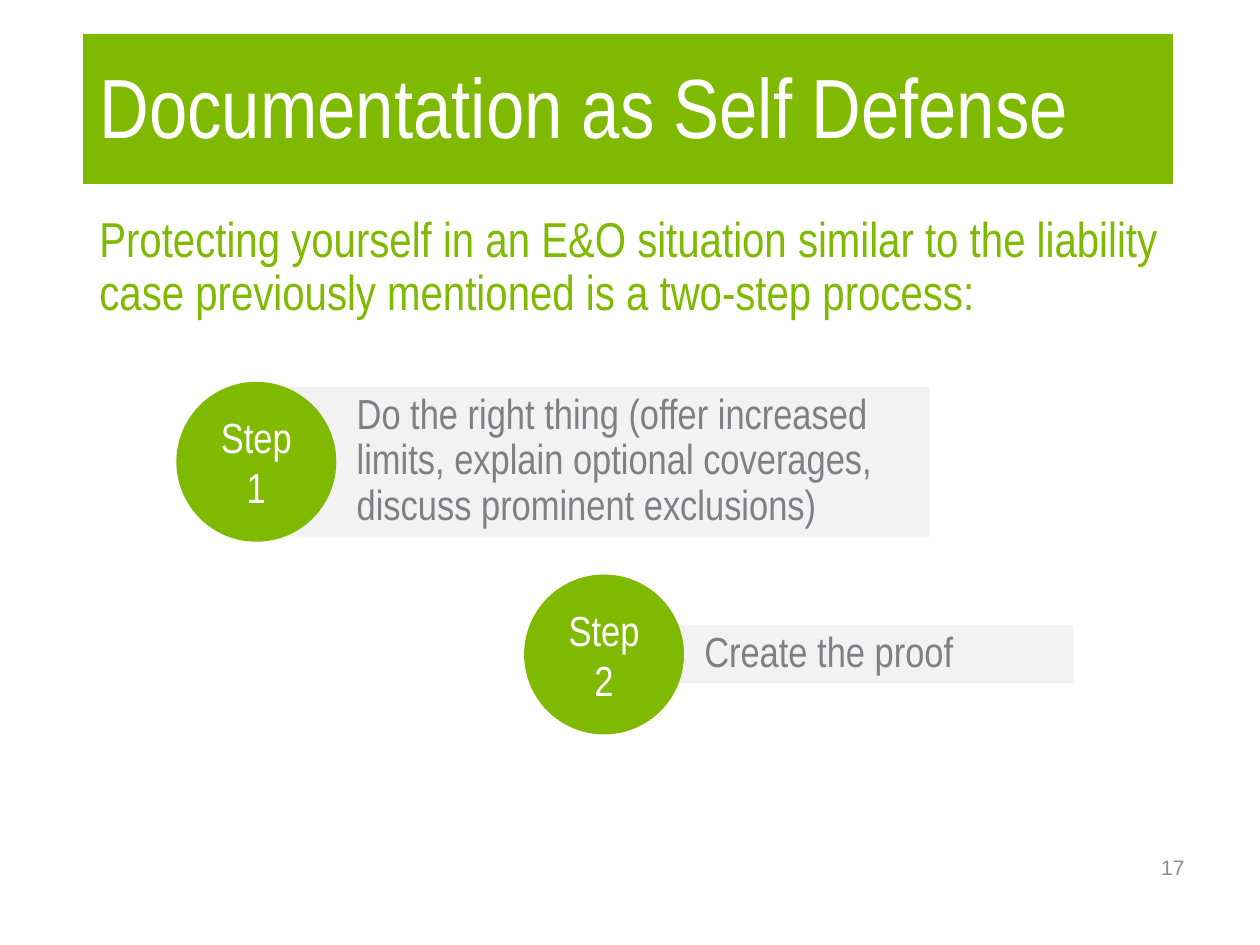
"""Build the slide on documentation as self defense."""
from dataclasses import dataclass

from pptx import Presentation
from pptx import util as u
from pptx.dml.color import RGBColor
from pptx.enum import shapes, text

GREEN = RGBColor(0x7F, 0xBA, 0x00)
WHITE = RGBColor(0xFF, 0xFF, 0xFF)
PALE = RGBColor(0xF2, 0xF2, 0xF2)
SLATE = RGBColor(0x80, 0x80, 0x84)
GRAY = RGBColor(0x8C, 0x8C, 0x8C)
NARROW = "Arial Narrow"
DIAMETER = 91.4
BAR_OFFSET = 59.8
BAR_INSET = 43.2


@dataclass
class Step:
    label: str
    message: str
    left: float
    top: float
    bar_width: float
    bar_height: float


STEPS = [
    Step("Step\v1", "Do the right thing (offer increased limits, explain "
         "optional coverages, discuss prominent exclusions)",
         100.8, 218.2, 370.8, 85.7),
    Step("Step\v2", "Create the proof", 299.5, 328.3, 254.2, 33.1),
]


def write(box, wording: str, size: float, color: RGBColor,
          font: str = NARROW, align=text.PP_ALIGN.LEFT,
          anchor=text.MSO_ANCHOR.TOP, spacing: float = 1.0) -> None:
    frame = box.text_frame
    frame.text = wording
    frame.word_wrap = True
    frame.auto_size = text.MSO_AUTO_SIZE.NONE
    frame.vertical_anchor = anchor
    para = frame.paragraphs[0]
    para.alignment = align
    para.line_spacing = spacing
    for span in para.runs:
        span.font.name = font
        span.font.size = u.Pt(size)
        span.font.color.rgb = color


def add_block(page, kind, left: float, top: float, width: float,
              height: float, fill: RGBColor):
    block = page.shapes.add_shape(
        kind, u.Pt(left), u.Pt(top), u.Pt(width), u.Pt(height))
    block.shadow.inherit = False
    block.fill.solid()
    block.fill.fore_color.rgb = fill
    block.line.fill.background()
    return block


def add_step(page, step: Step) -> None:
    bar_top = step.top + (DIAMETER - step.bar_height) / 2
    bar = add_block(page, shapes.MSO_SHAPE.RECTANGLE, step.left + BAR_OFFSET,
                    bar_top, step.bar_width, step.bar_height, PALE)
    write(bar, step.message, 24, SLATE, spacing=0.9)
    bar.text_frame.margin_left = u.Pt(BAR_INSET)
    circle = add_block(page, shapes.MSO_SHAPE.OVAL, step.left, step.top,
                       DIAMETER, DIAMETER, GREEN)
    write(circle, step.label, 24, WHITE, align=text.PP_ALIGN.CENTER,
          anchor=text.MSO_ANCHOR.MIDDLE)


def main() -> None:
    deck = Presentation()
    deck.slide_width, deck.slide_height = u.Pt(720), u.Pt(540)
    page = deck.slides.add_slide(deck.slide_layouts[5])

    title = page.shapes.title
    title.left, title.top = u.Pt(49.7), u.Pt(14.4)
    title.width, title.height = u.Pt(620.6), u.Pt(97.9)
    write(title, "Documentation as Self Defense", 48, WHITE,
          anchor=text.MSO_ANCHOR.MIDDLE, spacing=0.9)
    banner = add_block(page, shapes.MSO_SHAPE.RECTANGLE,
                       47.5, 19.4, 622.8, 85.7, GREEN)
    title.element.addprevious(banner.element)

    intro = page.shapes.add_textbox(
        u.Pt(49.7), u.Pt(119.5), u.Pt(620.6), u.Pt(98.6))
    write(intro, "Protecting yourself in an E&O situation similar to the "
          "liability case previously mentioned is a two-step process:",
          28, GREEN, spacing=0.9)

    for step in STEPS:
        add_step(page, step)

    number = page.shapes.add_textbox(
        u.Pt(516.2), u.Pt(481), u.Pt(167.8), u.Pt(28.8))
    write(number, "17", 12, GRAY, font="Arial", align=text.PP_ALIGN.RIGHT,
          anchor=text.MSO_ANCHOR.MIDDLE)

    deck.save("out.pptx")


if __name__ == "__main__":
    main()
